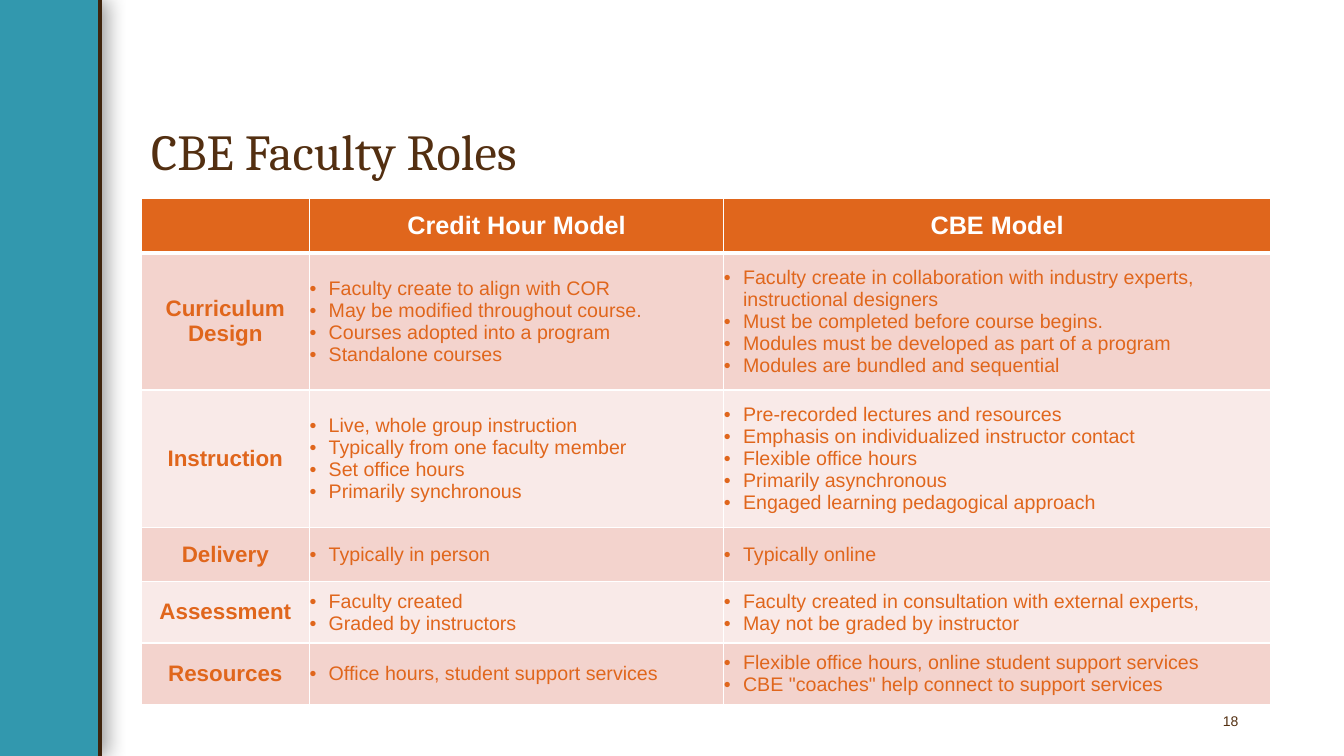
import pptx
import pptx.util
import pptx.dml.color
import pptx.enum.shapes
import pptx.enum.text
import pptx.oxml
import pptx.oxml.ns

Inches, Pt = pptx.util.Inches, pptx.util.Pt
RGBColor = pptx.dml.color.RGBColor
ANCHOR = pptx.enum.text.MSO_ANCHOR
ALIGN = pptx.enum.text.PP_ALIGN

# Content
TITLE = "CBE Faculty Roles"
PAGE_NUMBER = "18"
HEADERS = ["", "Credit Hour Model", "CBE Model"]
ROLES = [
    ("Curriculum Design",
     ["Faculty create to align with COR",
      "May be modified throughout course.",
      "Courses adopted into a program",
      "Standalone courses"],
     ["Faculty create in collaboration with industry experts, instructional designers",
      "Must be completed before course begins.",
      "Modules must be developed as part of a program",
      "Modules are bundled and sequential"]),
    ("Instruction",
     ["Live, whole group instruction",
      "Typically from one faculty member",
      "Set office hours",
      "Primarily synchronous"],
     ["Pre-recorded lectures and resources",
      "Emphasis on individualized instructor contact",
      "Flexible office hours",
      "Primarily asynchronous",
      "Engaged learning pedagogical approach"]),
    ("Delivery", ["Typically in person"], ["Typically online"]),
    ("Assessment",
     ["Faculty created", "Graded by instructors"],
     ["Faculty created in consultation with external experts,",
      "May not be graded by instructor"]),
    ("Resources",
     ["Office hours, student support services"],
     ["Flexible office hours, online student support services",
      'CBE "coaches" help connect to support services']),
]
COLUMN_WIDTHS = [1.67, 4.11, 5.42]
ROW_HEIGHTS = [0.54, 1.36, 1.36, 0.54, 0.61, 0.61]

# Formats
TEAL = RGBColor(0x32, 0x98, 0xAE)
DARK_BROWN = RGBColor(0x3F, 0x24, 0x0D)
BROWN = RGBColor(0x53, 0x2F, 0x11)
ORANGE = RGBColor(0xE0, 0x66, 0x1C)
WHITE = RGBColor(0xFF, 0xFF, 0xFF)
BANDS = [RGBColor(0xF3, 0xD3, 0xCD), RGBColor(0xF9, 0xEA, 0xE8)]
TITLE_FONT = {"name": "Cambria", "size": Pt(36), "bold": False}
NUMBER_FONT = {"name": "Arial", "size": Pt(10)}
HEADER_FONT = {"name": "Arial", "size": Pt(18), "bold": True}
ROLE_FONT = {"name": "Arial", "size": Pt(16), "bold": True}
ITEM_FONT = {"name": "Arial", "size": Pt(14), "bold": False}
NO_MARGINS = dict.fromkeys(
    ["margin_left", "margin_right", "margin_top", "margin_bottom"], 0)
NAMESPACE = pptx.oxml.ns.nsdecls("a")


def apply(target, values):
    for name, value in values.items():
        setattr(target, name, value)


def write(paragraph, text, font, color):
    run = paragraph.add_run()
    run.text = text
    apply(run.font, font)
    run.font.color.rgb = color


def add_bullet(paragraph):
    properties = paragraph._p.get_or_add_pPr()
    properties.set("marL", str(Inches(0.19)))
    properties.set("indent", str(-Inches(0.19)))
    for tag in ('buFont %s typeface="Arial"', 'buChar %s char="•"'):
        properties.append(pptx.oxml.parse_xml(f"<a:{tag % NAMESPACE}/>"))


def set_borders(cell, top, bottom):
    properties = cell._tc.get_or_add_tcPr()
    widths = {"lnL": 1, "lnR": 1, "lnT": top, "lnB": bottom}
    for position, (side, width) in enumerate(widths.items()):
        properties.insert(position, pptx.oxml.parse_xml(
            f'<a:{side} {NAMESPACE} w="{Pt(width)}"><a:solidFill>'
            f'<a:srgbClr val="{WHITE}"/></a:solidFill></a:{side}>'))


presentation = pptx.Presentation()
apply(presentation, {"slide_width": Inches(13.33), "slide_height": Inches(7.5)})
slide = presentation.slides.add_slide(presentation.slide_layouts[5])
shapes = slide.shapes

# Side band with a soft shadow, and its edge line
band = shapes.add_shape(pptx.enum.shapes.MSO_SHAPE.RECTANGLE,
                        0, 0, Inches(1.01), Inches(7.5))
band.fill.solid()
band.fill.fore_color.rgb = TEAL
band.line.fill.background()
band._element.spPr.append(pptx.oxml.parse_xml(
    f'<a:effectLst {NAMESPACE}><a:outerShdw blurRad="{Pt(15)}" dist="{Pt(3)}" dir="0">'
    '<a:srgbClr val="000000"><a:alpha val="40000"/></a:srgbClr>'
    '</a:outerShdw></a:effectLst>'))

edge = shapes.add_connector(pptx.enum.shapes.MSO_CONNECTOR.STRAIGHT,
                            Inches(0.99), Inches(7.5), Inches(0.99), Inches(-0.04))
edge.line.color.rgb = DARK_BROWN
edge.line.width = Pt(3)
edge._element.spPr.append(pptx.oxml.parse_xml(f"<a:effectLst {NAMESPACE}/>"))

# Title
title = shapes.title
apply(title, {"left": Inches(1.4), "top": Inches(0.4),
              "width": Inches(10.99), "height": Inches(1.45)})
title.text_frame.vertical_anchor = ANCHOR.BOTTOM
heading = title.text_frame.paragraphs[0]
apply(heading, {"alignment": ALIGN.LEFT, "line_spacing": 0.9})
write(heading, TITLE, TITLE_FONT, BROWN)

# Page number
number_frame = shapes.add_textbox(Inches(9.38), Inches(6.95),
                                  Inches(3), Inches(0.4)).text_frame
apply(number_frame, {"word_wrap": True, "vertical_anchor": ANCHOR.MIDDLE})
number_frame.paragraphs[0].alignment = ALIGN.RIGHT
write(number_frame.paragraphs[0], PAGE_NUMBER, NUMBER_FONT, BROWN)

# Table of roles
table = shapes.add_table(
    len(ROW_HEIGHTS), len(COLUMN_WIDTHS), Inches(1.4), Inches(1.97),
    Inches(sum(COLUMN_WIDTHS)), Inches(sum(ROW_HEIGHTS))).table
for column, width in zip(table.columns, COLUMN_WIDTHS):
    column.width = Inches(width)
for row, height in zip(table.rows, ROW_HEIGHTS):
    row.height = Inches(height)

for row_index, row_content in enumerate([HEADERS] + ROLES):
    is_header = row_index == 0
    for column_index, content in enumerate(row_content):
        cell = table.cell(row_index, column_index)
        cell.fill.solid()
        cell.fill.fore_color.rgb = ORANGE if is_header else BANDS[(row_index - 1) % 2]
        set_borders(cell, 3 if row_index == 1 else 1, 3 if is_header else 1)
        apply(cell, NO_MARGINS)
        cell.vertical_anchor = ANCHOR.MIDDLE
        frame = cell.text_frame
        if isinstance(content, list):
            for item_index, item in enumerate(content):
                paragraph = frame.add_paragraph() if item_index else frame.paragraphs[0]
                add_bullet(paragraph)
                write(paragraph, item, ITEM_FONT, ORANGE)
        elif content:
            frame.paragraphs[0].alignment = ALIGN.CENTER
            write(frame.paragraphs[0], content,
                  HEADER_FONT if is_header else ROLE_FONT,
                  WHITE if is_header else ORANGE)

presentation.save("out.pptx")
